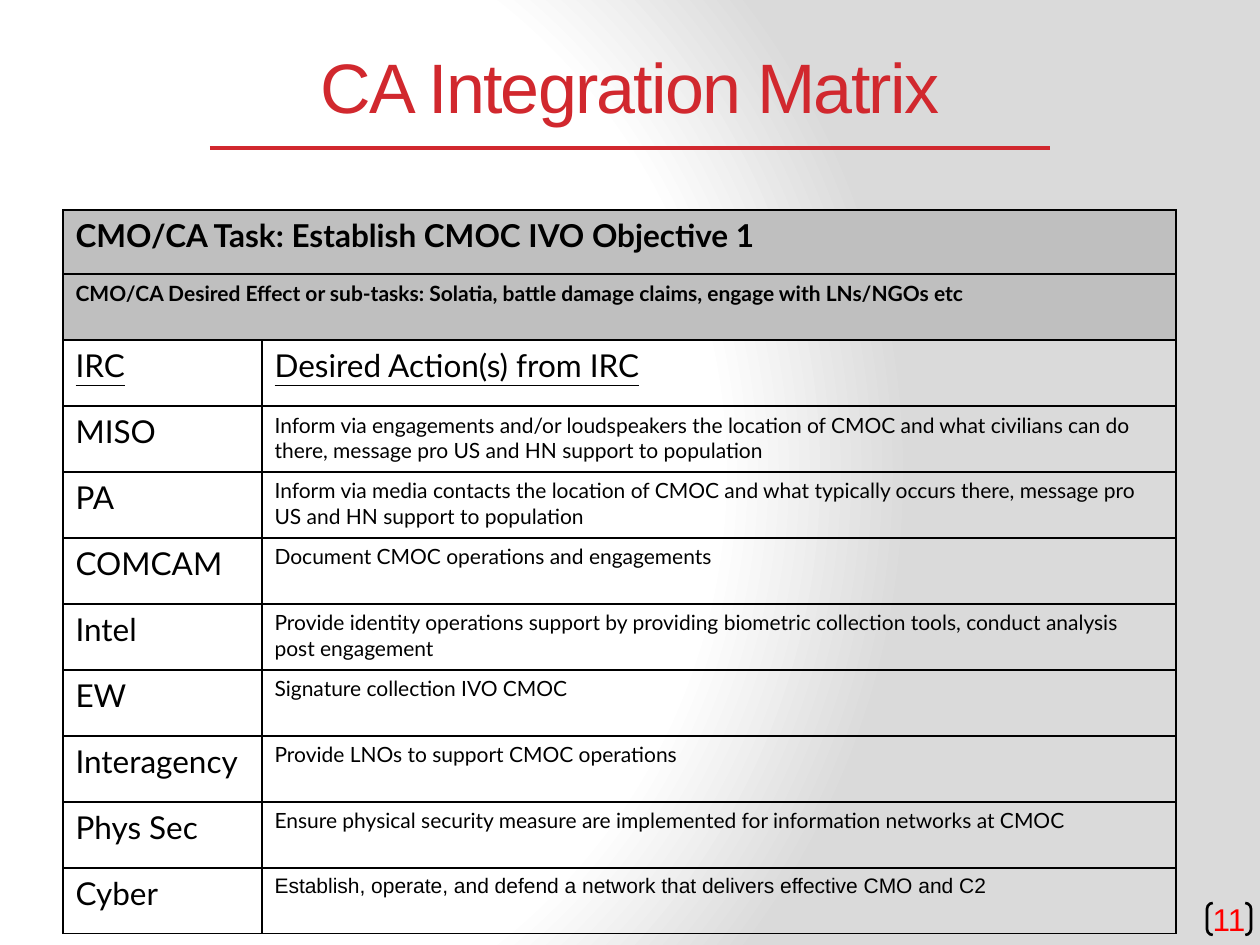
from lxml import etree
from pptx import Presentation
from pptx.dml.color import RGBColor
from pptx.enum.shapes import MSO_CONNECTOR, MSO_SHAPE
from pptx.enum.text import MSO_ANCHOR, PP_ALIGN
from pptx.oxml import parse_xml
from pptx.oxml.ns import nsdecls, qn
from pptx.util import Emu, Pt

LINE = MSO_CONNECTOR.STRAIGHT
PAIR = MSO_SHAPE.DOUBLE_BRACKET
TOP, MID = MSO_ANCHOR.TOP, MSO_ANCHOR.MIDDLE
CENTER = PP_ALIGN.CENTER
SCALE = 914400 / 126
RED, BLACK, GREY = "D1282E", "000000", "BFBFBF"

HEADS = [
    ("CMO/CA Task: Establish CMOC IVO Objective 1", 18),
    ("CMO/CA Desired Effect or sub-tasks: Solatia, battle damage claims, "
     "engage with LNs/NGOs etc", 12),
]
LABELS = ("IRC", "Desired Action(s) from IRC")
ROWS = [
    ("MISO", "Inform via engagements and/or loudspeakers the location of CMOC and "
     "what civilians can do there, message pro US and HN support to population"),
    ("PA", "Inform via media contacts the location of CMOC and what typically "
     "occurs there, message pro US and HN support to population"),
    ("COMCAM", "Document CMOC operations and engagements"),
    ("Intel", "Provide identity operations support by providing biometric "
     "collection tools, conduct analysis post engagement"),
    ("EW", "Signature collection IVO CMOC"),
    ("Interagency", "Provide LNOs to support CMOC operations"),
    ("Phys Sec", "Ensure physical security measure are implemented for "
     "information networks at CMOC"),
    ("Cyber", "Establish, operate, and defend a network that delivers effective "
     "CMO and C2"),
]


def px(n):
    return Emu(round(n * SCALE))


def color(code):
    return RGBColor.from_string(code)


def write(frame, text, size, tint=BLACK, face="Lato", bold=False, under=False):
    """Add one styled run to the first paragraph and return it."""
    run = frame.paragraphs[0].add_run()
    run.text = text
    font = run.font
    font.size, font.name, font.bold, font.underline = Pt(size), face, bold, under
    font.color.rgb = color(tint)
    return run


def paint_back(slide):
    """Fill the slide with a round gradient centred left of the middle."""
    stops = "".join(
        f'<a:gs pos="{pos}000"><a:srgbClr val="{code}"/></a:gs>'
        for pos, code in ((0, "FFFFFF"), (75, "FFFFFF"), (100, "DADADA")))
    back = parse_xml(
        f'<p:bg {nsdecls("p", "a")}><p:bgPr><a:gradFill rotWithShape="1">'
        f'<a:gsLst>{stops}</a:gsLst><a:path path="circle">'
        '<a:fillToRect l="20000" t="50000" r="100000" b="50000"/></a:path>'
        '</a:gradFill><a:effectLst/></p:bgPr></p:bg>')
    slide.shapes._spTree.addprevious(back)


def add_title(slide, x, y, w, h):
    box = slide.shapes.add_textbox(px(x), px(y), px(w), px(h))
    frame = box.text_frame
    frame.word_wrap, frame.vertical_anchor = True, TOP
    frame.margin_top = px(12)
    frame.paragraphs[0].alignment = CENTER
    run = write(frame, "CA Integration Matrix", 40, RED, "Arial")
    run._r.get_or_add_rPr().set("spc", "-100")
    rule = slide.shapes.add_connector(
        LINE, px(x + 21), px(y + 117), px(x + w - 21), px(y + 117))
    rule.line.color.rgb, rule.line.width = color(RED), Pt(2)
    etree.SubElement(rule._element.spPr, qn("a:effectLst"))


def edge(cell):
    """Draw a thin black line on all four sides."""
    props = cell._tc.get_or_add_tcPr()
    for side in "LRTB":
        props.append(parse_xml(
            f'<a:ln{side} {nsdecls("a")} w="12700"><a:solidFill>'
            f'<a:srgbClr val="{BLACK}"/></a:solidFill></a:ln{side}>'))


def add_matrix(slide, x, y, w, h):
    count = len(HEADS) + 1 + len(ROWS)
    table = slide.shapes.add_table(count, 2, px(x), px(y), px(w), px(h)).table
    table.first_row = table.horz_banding = False
    table.columns[0].width, table.columns[1].width = px(199), px(w - 199)
    step = 66
    for i, row in enumerate(table.rows):
        row.height = px(step if i else h - step * (count - 1))
        for cell in row.cells:
            edge(cell)
            if i < len(HEADS):
                cell.fill.solid()
                cell.fill.fore_color.rgb = color(GREY)
            else:
                cell.fill.background()

    for i, (text, size) in enumerate(HEADS):
        cell = table.cell(i, 0)
        cell.merge(table.cell(i, 1))
        write(cell.text_frame, text, size, bold=True)
    start = len(HEADS)
    for j, text in enumerate(LABELS):
        write(table.cell(start, j).text_frame, text, 18, under=True)
    for i, (name, act) in enumerate(ROWS, start + 1):
        write(table.cell(i, 0).text_frame, name, 18)
        face = "Arial" if name == "Cyber" else "Lato"
        write(table.cell(i, 1).text_frame, act, 12, face=face)


def add_number(slide, x, y, w, h):
    mark = slide.shapes.add_shape(PAIR, px(x), px(y), px(w), px(h))
    mark.adjustments[0] = 0.18
    mark.shadow.inherit = False
    mark.fill.background()
    mark.line.color.rgb, mark.line.width = color(BLACK), Pt(1.5)
    frame = mark.text_frame
    frame.margin_left = frame.margin_right = 0
    frame.margin_top = frame.margin_bottom = 0
    frame.word_wrap, frame.vertical_anchor = False, MID
    frame.paragraphs[0].alignment = CENTER
    write(frame, "11", 18, "FF0000", "Arial")


def main():
    deck = Presentation()
    deck.slide_width, deck.slide_height = px(1260), px(945)
    slide = deck.slides.add_slide(deck.slide_layouts[6])
    paint_back(slide)
    add_number(slide, 1207, 903, 44, 32)
    add_matrix(slide, 63, 210, 1113, 724)
    add_title(slide, 189, 31, 882, 158)
    deck.save("out.pptx")


if __name__ == "__main__":
    main()
